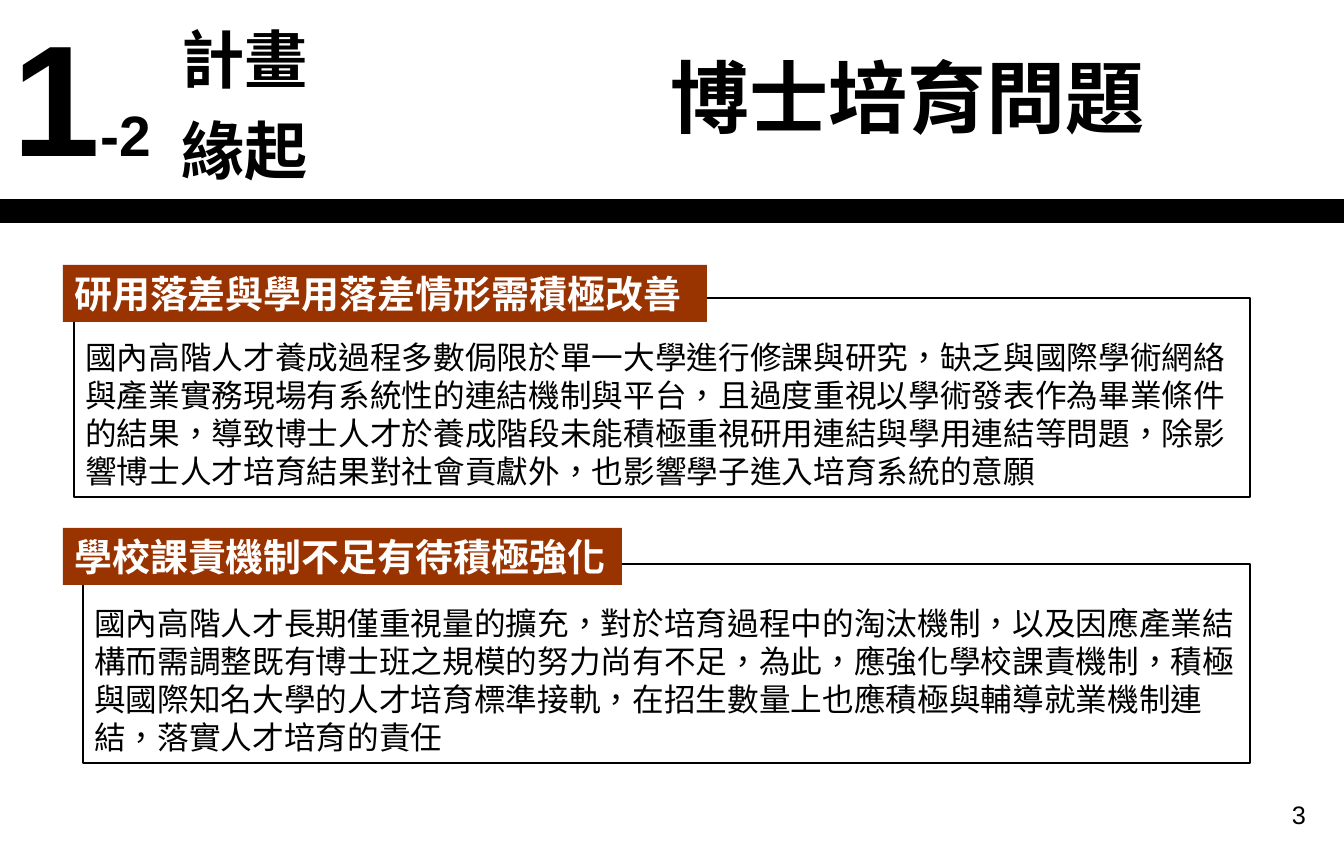
import pptx
import pptx.util
import pptx.dml.color
import pptx.enum.lang
import pptx.enum.shapes
import pptx.enum.text
import pptx.oxml.ns
import lxml.etree

PX = 8035
THEME = {
    "latin": "Arial", "chinese": "Noto Sans CJK SC",
    "ink": "000000", "label": "993300", "reverse": "FFFFFF",
    "numeral": 100, "title": 50, "chapter": 40, "part": 36,
    "heading": 24, "body": 20, "footer": 16,
}
SECTIONS = [
    ((63, 265, 644, 57), "研用落差與學用落差情形需積極改善",
     (74, 298, 1176, 199),
     "國內高階人才養成過程多數侷限於單一大學進行修課與研究，缺乏與國際學術網絡與產業實務現場有系統性的連結機制與平台，且過度重視以學術發表作為畢業條件的結果，導致博士人才於養成階段未能積極重視研用連結與學用連結等問題，除影響博士人才培育結果對社會貢獻外，也影響學子進入培育系統的意願"),
    ((63, 528, 559, 57), "學校課責機制不足有待積極強化",
     (83, 564, 1167, 199),
     "國內高階人才長期僅重視量的擴充，對於培育過程中的淘汰機制，以及因應產業結構而需調整既有博士班之規模的努力尚有不足，為此，應強化學校課責機制，積極與國際知名大學的人才培育標準接軌，在招生數量上也應積極與輔導就業機制連結，落實人才培育的責任"),
]


def scaled(*lengths):
    return [length * PX for length in lengths]


def style(font, size, color="ink", face="chinese", bold=False):
    font.size = pptx.util.Pt(THEME[size])
    font.bold = bold
    font.color.rgb = pptx.dml.color.RGBColor.from_string(THEME[color])
    font.name = THEME[face]
    if face == "chinese":
        font.language_id = pptx.enum.lang.MSO_LANGUAGE_ID.TRADITIONAL_CHINESE
        latin = font._element.find(pptx.oxml.ns.qn("a:latin"))
        east_asian = lxml.etree.Element(pptx.oxml.ns.qn("a:ea"), typeface=THEME[face])
        latin.addnext(east_asian)


deck = pptx.Presentation()
deck.slide_width, deck.slide_height = scaled(1344, 853)
page = deck.slides.add_slide(deck.slide_layouts[6])
rectangle = pptx.enum.shapes.MSO_SHAPE.RECTANGLE
middle = pptx.enum.text.MSO_ANCHOR.MIDDLE
left = pptx.enum.text.PP_ALIGN.LEFT

chapter = page.shapes.add_table(1, 2, *scaled(1, 1, 338, 201)).table
chapter.first_row = chapter.horz_banding = False
for cell in chapter.iter_cells():
    cell.fill.background()
    cell.vertical_anchor = middle
number, name = chapter.iter_cells()
para = number.text_frame.paragraphs[0]
for text, size in (("1", "numeral"), ("-2", "part")):
    span = para.add_run()
    span.text = text
    style(span.font, size, face="latin", bold=True)
name.text = "計畫緣起"
style(name.text_frame.paragraphs[0].font, "chapter", bold=True)

rule = page.shapes.add_connector(
    pptx.enum.shapes.MSO_CONNECTOR.STRAIGHT, *scaled(0, 211, 1344, 211))
rule.line.width = pptx.util.Pt(15)
rule.line.color.rgb = pptx.dml.color.RGBColor.from_string(THEME["ink"])
lxml.etree.SubElement(rule._element.spPr, pptx.oxml.ns.qn("a:effectLst"))

footer = page.shapes.add_textbox(*scaled(1003, 794, 314, 59)).text_frame
footer.word_wrap = True
para = footer.paragraphs[0]
para.text = "3"
para.alignment = pptx.enum.text.PP_ALIGN.RIGHT
style(para.font, "footer", face="latin")

for label_area, heading, body_area, body in SECTIONS:
    box = page.shapes.add_shape(rectangle, *scaled(*body_area))
    box.shadow.inherit = False
    box.fill.background()
    box.line.color.rgb = pptx.dml.color.RGBColor.from_string(THEME["ink"])
    box.line.width = pptx.util.Pt(0.75)
    box.text_frame.word_wrap = True
    box.text_frame.vertical_anchor = pptx.enum.text.MSO_ANCHOR.TOP
    box.text_frame.margin_top = 40 * PX
    para = box.text_frame.paragraphs[0]
    para.text = body
    para.alignment = left
    para.line_spacing = pptx.util.Pt(24)
    para._p.get_or_add_pPr().set("hangingPunct", "0")
    style(para.font, "body")

    label = page.shapes.add_shape(rectangle, *scaled(*label_area))
    label.shadow.inherit = False
    label.fill.solid()
    label.fill.fore_color.rgb = pptx.dml.color.RGBColor.from_string(THEME["label"])
    label.line.fill.background()
    label.text_frame.word_wrap = True
    label.text_frame.vertical_anchor = middle
    para = label.text_frame.paragraphs[0]
    para.text = heading
    para.alignment = left
    style(para.font, "heading", "reverse", bold=True)

title = page.shapes.add_textbox(*scaled(659, 43, 636, 107)).text_frame
title.word_wrap = True
para = title.paragraphs[0]
para.text = "博士培育問題"
para.line_spacing = pptx.util.Pt(60)
style(para.font, "title", bold=True)

deck.save("out.pptx")
